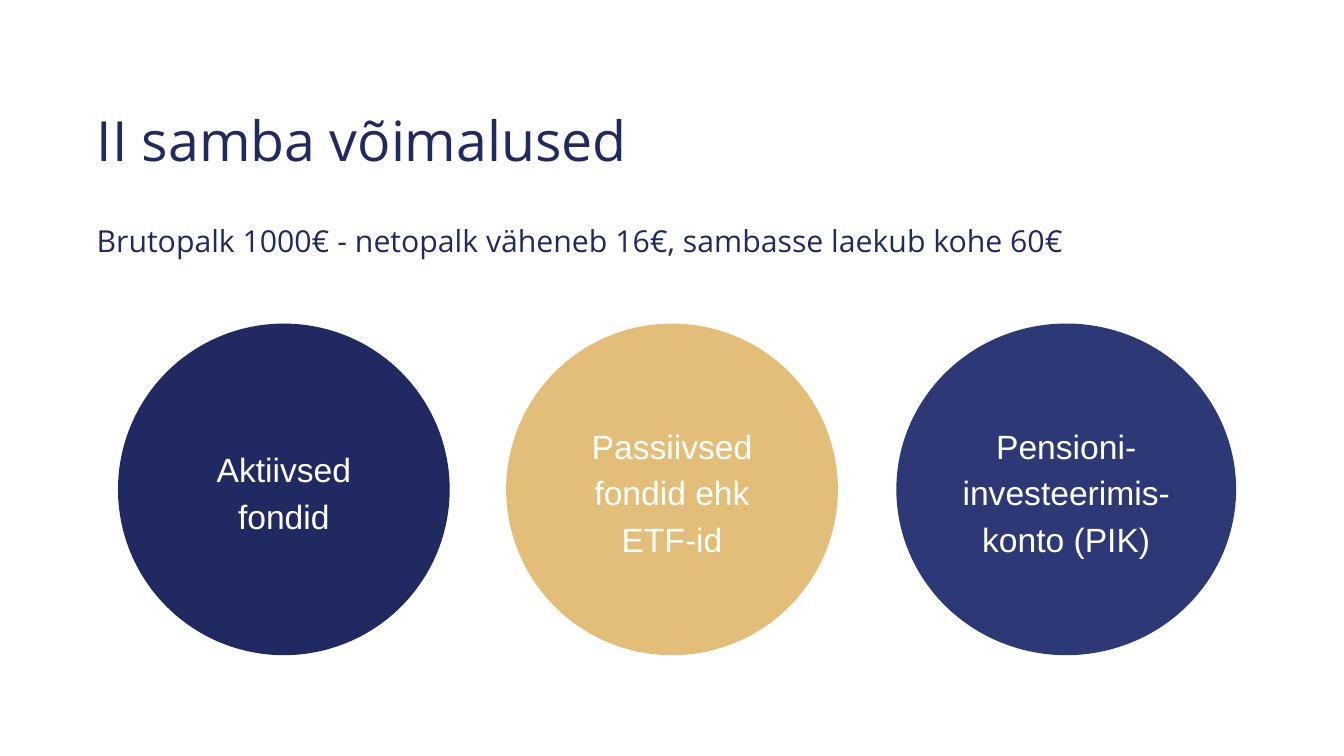
from pptx import Presentation
from pptx.dml.color import RGBColor
from pptx.enum.shapes import MSO_SHAPE
from pptx.enum.text import MSO_ANCHOR, PP_ALIGN
from pptx.util import Inches, Pt

NAVY = RGBColor(0x21, 0x29, 0x63)
GOLD = RGBColor(0xE3, 0xBE, 0x78)
BLUE = RGBColor(0x2C, 0x39, 0x76)
WHITE = RGBColor(0xFF, 0xFF, 0xFF)

OPTIONS = [
    (1.17, 3.29, NAVY, ["Aktiivsed fondid"]),
    (5.02, 3.29, GOLD, ["Passiivsed fondid ehk ETF-id"]),
    (8.89, 3.37, BLUE, ["Pensioni-", "investeerimis-konto (PIK)"]),
]


def add_paragraph(tf, index, text, font, size, color):
    """Add one paragraph with a single styled run."""
    p = tf.add_paragraph() if index else tf.paragraphs[0]
    r = p.add_run()
    r.text = text
    r.font.name = font
    r.font.size = Pt(size)
    r.font.color.rgb = color
    return p


def add_heading(s, title, subtitle):
    """Add the title with the salary example below it."""
    tf = s.shapes.add_textbox(Inches(0.86), Inches(1), Inches(11.61), Inches(1.8)).text_frame
    tf.word_wrap = True
    add_paragraph(tf, 0, title, "Open Sans", 39.6, NAVY)
    p = add_paragraph(tf, 1, subtitle, "Open Sans", 21.6, NAVY)
    p.space_before = Pt(36)


def add_circle(s, left, width, color, lines):
    """Add one filled circle with a centred label."""
    sp = s.shapes.add_shape(MSO_SHAPE.OVAL, Inches(left), Inches(3.21), Inches(width), Inches(3.29))
    sp.shadow.inherit = False
    sp.fill.solid()
    sp.fill.fore_color.rgb = color
    sp.line.fill.background()
    tf = sp.text_frame
    tf.word_wrap = True
    tf.vertical_anchor = MSO_ANCHOR.MIDDLE
    tf.margin_left = tf.margin_right = tf.margin_top = tf.margin_bottom = Inches(0.12)
    for index, line in enumerate(lines):
        p = add_paragraph(tf, index, line, "Arial", 24, WHITE)
        p.alignment = PP_ALIGN.CENTER
        p.line_spacing = 1.15


def main():
    """Build the slide and save it."""
    prs = Presentation()
    prs.slide_width = Inches(13.33)
    prs.slide_height = Inches(7.5)
    s = prs.slides.add_slide(prs.slide_layouts[6])
    for option in OPTIONS:
        add_circle(s, *option)
    add_heading(s, "II samba võimalused",
                "Brutopalk 1000€ - netopalk väheneb 16€, sambasse laekub kohe 60€")
    prs.save("out.pptx")


if __name__ == "__main__":
    main()
